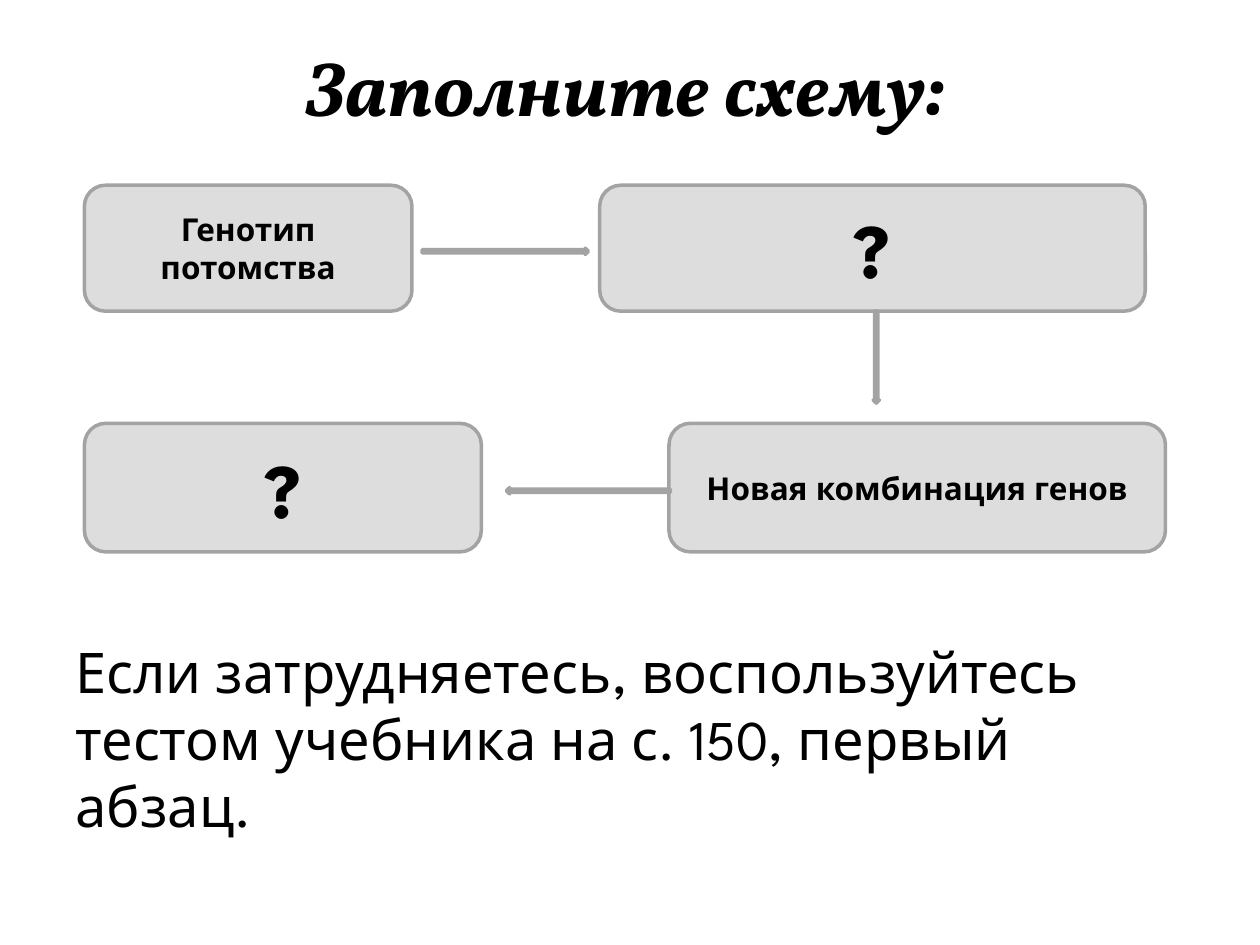
from typing import NamedTuple

from pptx import Presentation
from pptx.dml.color import RGBColor
from pptx.enum.shapes import MSO_SHAPE as Shape
from pptx.enum.text import MSO_ANCHOR as Anchor, PP_ALIGN as Align
from pptx.util import Inches, Pt

BLACK = RGBColor(0x00, 0x00, 0x00)
GREY = RGBColor(0xDD, 0xDD, 0xDD)
EDGE = RGBColor(0xA3, 0xA3, 0xA3)
SANS, SERIF = "League Spartan", "Vollkorn"
WIDE, HIGH = Inches(10), Inches(7.5)


class Area(NamedTuple):
    """Place and size in percent of the slide."""
    left: float
    top: float
    width: float
    height: float

    def emu(self) -> list[int]:
        return [round(part * full / 100)
                for part, full in zip(self, (WIDE, HIGH, WIDE, HIGH))]


class Node(NamedTuple):
    area: Area
    text: str
    size: int


class Arrow(NamedTuple):
    kind: Shape
    area: Area


LEFT, ROW1, ROW2 = 6.7, 19.6, 44.8
TALL1, TALL2 = 13.33, 13.6
THIN_X, THIN_Y = 0.5, 0.67

NODES = [
    Node(Area(LEFT, ROW1, 26, TALL1), "Генотип потомства", 18),
    Node(Area(47.6, ROW1, 43.3, TALL1), "?", 44),
    Node(Area(53.1, ROW2, 39.4, TALL2), "Новая комбинация генов", 18),
    Node(Area(LEFT, ROW2, 31.5, TALL2), "?", 44),
]
ARROWS = [
    Arrow(Shape.RIGHT_ARROW, Area(33.5, ROW1 + TALL1 / 2, 13.2, THIN_Y)),
    Arrow(Shape.DOWN_ARROW, Area(69.3, ROW1 + TALL1, THIN_X, 9.73)),
    Arrow(Shape.LEFT_ARROW, Area(40.2, ROW2 + TALL2 / 2, 13, THIN_Y)),
]


def place(shape, area: Area) -> None:
    shape.left, shape.top, shape.width, shape.height = area.emu()


def write(shape, text: str, face: str, size: int, align: Align,
          anchor: Anchor, bold: bool = False, slant: bool = False) -> None:
    frame = shape.text_frame
    frame.text = text
    frame.word_wrap = True
    frame.vertical_anchor = anchor
    para = frame.paragraphs[0]
    para.alignment = align
    font = para.runs[0].font
    font.name, font.size = face, Pt(size)
    font.bold, font.italic = bold, slant
    font.color.rgb = BLACK


def draw(slide, kind: Shape, area: Area):
    shape = slide.shapes.add_shape(kind, *area.emu())
    shape.shadow.inherit = False
    shape.fill.solid()
    shape.fill.fore_color.rgb = GREY
    shape.line.color.rgb = EDGE
    shape.line.width = Pt(2)
    return shape


def main() -> None:
    deck = Presentation()
    deck.slide_width, deck.slide_height = WIDE, HIGH
    slide = deck.slides.add_slide(deck.slide_layouts[5])

    # Title
    title = slide.shapes.title
    place(title, Area(4.3, 2.8, 90.7, 12.53))
    write(title, "Заполните схему:", SERIF, 44, Align.CENTER,
          Anchor.MIDDLE, bold=True, slant=True)

    # Scheme
    for node in NODES:
        box = draw(slide, Shape.ROUNDED_RECTANGLE, node.area)
        write(box, node.text, SANS, node.size, Align.CENTER,
              Anchor.MIDDLE, bold=True)
    for arrow in ARROWS:
        draw(slide, arrow.kind, arrow.area)

    # Hint
    hint = slide.shapes.add_textbox(*Area(5, 66.8, 90, 22.53).emu())
    write(hint, "Если затрудняетесь, воспользуйтесь тестом учебника "
          "на с. 150, первый абзац.", SANS, 32, Align.LEFT, Anchor.TOP)

    deck.save("out.pptx")


if __name__ == "__main__":
    main()
